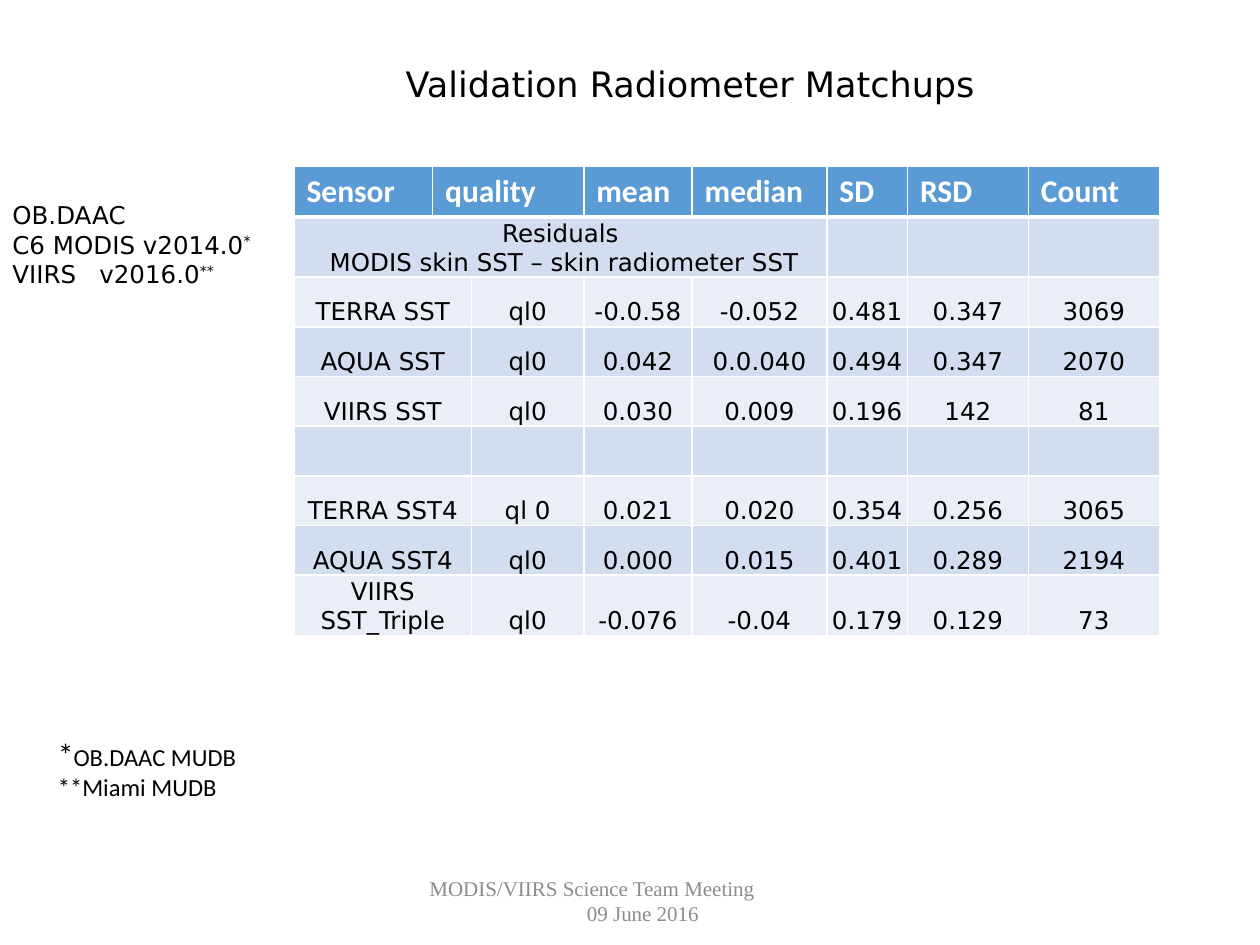
"""Build the slide on validation radiometer matchups."""
from lxml.etree import SubElement
from pptx import Presentation
from pptx.dml.color import RGBColor
from pptx.enum.text import MSO_ANCHOR as ANCHOR, PP_ALIGN as ALIGN
from pptx.oxml.ns import qn
from pptx.util import Pt


def rgb(value):
    return RGBColor.from_string(value)


def style(p, name, size, color="000000", align=ALIGN.LEFT, bold=False):
    p.alignment = align
    p.font.name = name
    p.font.size = Pt(size)
    p.font.color.rgb = rgb(color)
    p.font.bold = bold


prs = Presentation()
prs.slide_width, prs.slide_height = Pt(720), Pt(540)
s = prs.slides.add_slide(prs.slide_layouts[6])

tf = s.shapes.add_textbox(Pt(212), Pt(30), Pt(365), Pt(36)).text_frame
tf.word_wrap = True
tf.vertical_anchor = ANCHOR.MIDDLE
p = tf.paragraphs[0]
p.text = "Validation Radiometer Matchups"
style(p, "DejaVu Sans", 20, align=ALIGN.CENTER)

widths = [79.2, 22.3, 64.1, 61.9, 77, 46.1, 69.1, 74.9]
rows = [
    ["Sensor", "quality", "", "mean", "median", "SD", "RSD", "Count"],
    ["Residuals\n MODIS skin SST – skin radiometer SST"] + [""] * 7,
    ["TERRA SST", "", "ql0", "-0.0.58", "-0.052", "0.481", "0.347", "3069"],
    ["AQUA SST", "", "ql0", "0.042", "0.0.040", "0.494", "0.347", "2070"],
    ["VIIRS SST", "", "ql0", "0.030", "0.009", "0.196", "142", "81"],
    [""] * 8,
    ["TERRA SST4", "", "ql 0", "0.021", "0.020", "0.354", "0.256", "3065"],
    ["AQUA SST4", "", "ql0", "0.000", "0.015", "0.401", "0.289", "2194"],
    ["VIIRS SST_Triple", "", "ql0", "-0.076", "-0.04", "0.179", "0.129", "73"],
]
table = s.shapes.add_table(len(rows), len(widths), Pt(168), Pt(95.2),
                           Pt(494.6), Pt(265.2)).table
for column, width in zip(table.columns, widths):
    column.width = Pt(width)
for i, values in enumerate(rows):
    table.rows[i].height = Pt(33.2 if i in (1, 8) else 28.4)
    for j, value in enumerate(values):
        cell = table.cell(i, j)
        tcPr = cell._tc.get_or_add_tcPr()
        for side in "LRTB":
            thick = (i, side) in ((0, "B"), (1, "T"))
            ln = SubElement(tcPr, qn(f"a:ln{side}"), w=str(Pt(3 if thick else 1)))
            fill = SubElement(ln, qn("a:solidFill"))
            SubElement(fill, qn("a:srgbClr"), val="FFFFFF")
        cell.fill.solid()
        cell.fill.fore_color.rgb = rgb(
            "5B9BD5" if i == 0 else "D2DEEF" if i % 2 else "EAEFF7")
        cell.text = value
        if i:
            cell.vertical_anchor = ANCHOR.BOTTOM
            cell.margin_left = cell.margin_right = cell.margin_top = Pt(0.75)
            cell.margin_bottom = 0
        for p in cell.text_frame.paragraphs:
            if i:
                style(p, "DejaVu Sans", 14, align=ALIGN.CENTER)
            else:
                style(p, "Calibri", 18, "FFFFFF", bold=True)
table.cell(0, 1).merge(table.cell(0, 2))
table.cell(1, 0).merge(table.cell(1, 4))
for i in range(2, len(rows)):
    table.cell(i, 0).merge(table.cell(i, 1))

tf = s.shapes.add_textbox(Pt(238.3), Pt(500.4), Pt(243.4), Pt(28.8)).text_frame
tf.word_wrap = True
tf.vertical_anchor = ANCHOR.MIDDLE
tf.text = "MODIS/VIIRS Science Team Meeting\n09 June 2016"
for p in tf.paragraphs:
    style(p, "Times New Roman", 12, "8C8C8C")
p._p.get_or_add_pPr().set("marL", str(Pt(90)))

tf = s.shapes.add_textbox(0, Pt(110.9), Pt(158.4), Pt(58.3)).text_frame
tf.word_wrap = True
tf.text = "OB.DAAC\nC6 MODIS v2014.0\nVIIRS\tv2016.0"
for p, mark in zip(tf.paragraphs, ["", "*", "**"]):
    if mark:
        r = p.add_run()
        r.text = mark
        r.font._element.set("baseline", "30000")
    if mark == "**":
        tabs = SubElement(p._p.get_or_add_pPr(), qn("a:tabLst"))
        SubElement(tabs, qn("a:tab"), pos=str(Pt(49.7)), algn="l")
    style(p, "DejaVu Sans", 14)

tf = s.shapes.add_textbox(Pt(26), Pt(416.2), Pt(122), Pt(46)).text_frame
tf.word_wrap = True
tf.text = "*\n**Miami MUDB"
for p in tf.paragraphs:
    style(p, "Calibri", 14)
p = tf.paragraphs[0]
p.runs[0].font.size = Pt(18)
p.add_run().text = "OB.DAAC MUDB"

prs.save("out.pptx")
